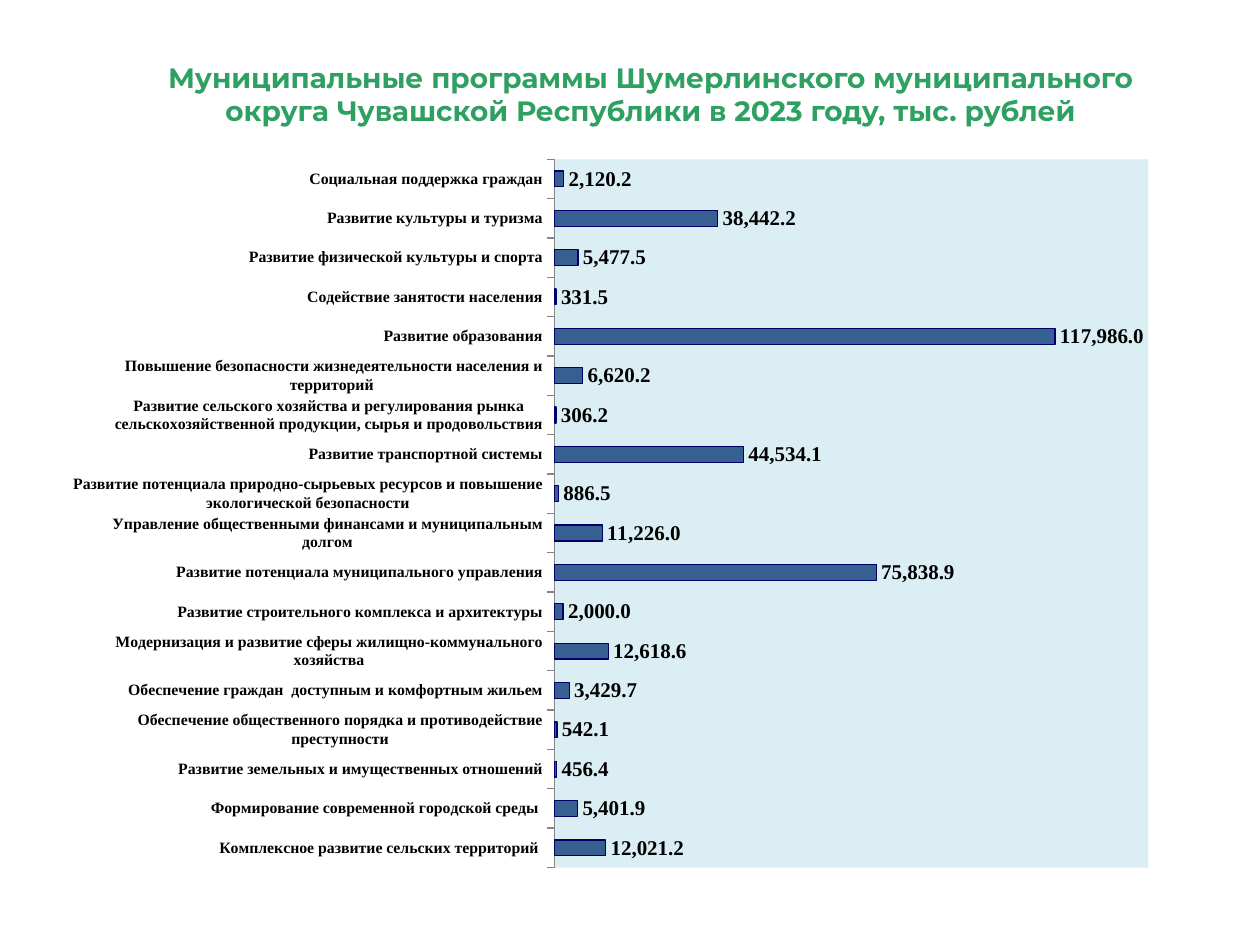
from lxml import etree
from pptx import Presentation
from pptx.chart.data import CategoryChartData
from pptx.dml.color import RGBColor
from pptx.enum.chart import XL_CHART_TYPE, XL_LABEL_POSITION, XL_TICK_LABEL_POSITION, XL_TICK_MARK
from pptx.enum.text import MSO_ANCHOR, PP_ALIGN
from pptx.oxml import parse_xml
from pptx.oxml.ns import nsdecls, qn
from pptx.util import Inches, Pt

TITLE = ("Муниципальные программы Шумерлинского муниципального "
         "округа Чувашской Республики в 2023 году, тыс. рублей")

# Programmes from the bottom bar to the top one, thousand roubles
PROGRAMMES = [
    ("Комплексное развитие сельских территорий ", 12021.2),
    ("Формирование современной городской среды ", 5401.9),
    ("Развитие земельных и имущественных отношений", 456.4),
    ("Обеспечение общественного порядка и противодействие преступности", 542.1),
    ("Обеспечение граждан  доступным и комфортным жильем", 3429.7),
    ("Модернизация и развитие сферы жилищно-коммунального хозяйства", 12618.6),
    ("Развитие строительного комплекса и архитектуры", 2000.0),
    ("Развитие потенциала муниципального управления", 75838.9),
    ("Управление общественными финансами и муниципальным долгом", 11226.0),
    ("Развитие потенциала природно-сырьевых ресурсов и повышение "
     "экологической безопасности", 886.5),
    ("Развитие транспортной системы", 44534.1),
    ("Развитие сельского хозяйства и регулирования рынка "
     "сельскохозяйственной продукции, сырья и продовольствия", 306.2),
    ("Повышение безопасности жизнедеятельности населения и территорий ", 6620.2),
    ("Развитие образования", 117986.0),
    ("Содействие занятости населения", 331.5),
    ("Развитие физической культуры и спорта", 5477.5),
    ("Развитие культуры и туризма", 38442.2),
    ("Социальная поддержка граждан", 2120.2),
]


def color(value):
    return RGBColor.from_string(value)


class Page:
    """Holds the style and the current slide."""

    number_format = "#,##0.0"
    title_font = {"name": "Montserrat", "size": Pt(16), "bold": True}
    chart_font = {"name": "Calibri", "size": Pt(10)}
    axis_font = {"name": "Times New Roman", "size": Pt(9), "bold": True}
    label_font = {"name": "Times New Roman", "size": Pt(12), "bold": True}
    green, black, blue, navy = "2EA061", "000000", "376092", "000066"
    pale, grey = "DBEEF4", "868686"

    def __init__(self, deck):
        self.slide = deck.slides.add_slide(deck.slide_layouts[0])

    def format_font(self, font, values, fill):
        for name, value in values.items():
            setattr(font, name, value)
        font.color.rgb = color(fill)

    def title(self, text, left, top, width, height):
        box = self.slide.shapes.title
        place = {"left": left, "top": top, "width": width, "height": height}
        for name, value in place.items():
            setattr(box, name, Inches(value))
        frame = box.text_frame
        frame.text = text
        frame.word_wrap = True
        frame.vertical_anchor = MSO_ANCHOR.MIDDLE
        para = frame.paragraphs[0]
        para.alignment = PP_ALIGN.CENTER
        para.line_spacing = 1.0
        self.format_font(para.runs[0].font, self.title_font, self.green)

    def bar_chart(self, rows, left, top, width, height):
        data = CategoryChartData(number_format=self.number_format)
        data.categories = [name for name, amount in rows]
        data.add_series("Series 1", [amount for name, amount in rows])
        chart = self.slide.shapes.add_chart(
            XL_CHART_TYPE.BAR_CLUSTERED, Inches(left), Inches(top),
            Inches(width), Inches(height), data).chart
        chart.has_legend = chart.has_title = False
        self.format_font(chart.font, self.chart_font, self.black)
        self.axes(chart)
        self.bars(chart.plots[0])
        return chart

    def axes(self, chart):
        names = chart.category_axis
        names.major_tick_mark = XL_TICK_MARK.OUTSIDE
        names.tick_label_position = XL_TICK_LABEL_POSITION.LOW
        names.format.line.color.rgb = color(self.grey)
        self.format_font(names.tick_labels.font, self.axis_font, self.black)
        amounts = chart.value_axis
        amounts.minimum_scale, amounts.maximum_scale = 0, 140000
        amounts.has_major_gridlines = False
        amounts.visible = False

    def bars(self, plot):
        plot.gap_width = 150
        plot.vary_by_categories = False
        series = plot.series[0]
        series.format.fill.solid()
        series.format.fill.fore_color.rgb = color(self.blue)
        series.format.line.color.rgb = color(self.navy)
        series.format.line.width = Pt(0.75)
        labels = series.data_labels
        values = {"show_value": True, "number_format": self.number_format,
                  "number_format_is_linked": False,
                  "position": XL_LABEL_POSITION.OUTSIDE_END}
        for name, value in values.items():
            setattr(labels, name, value)
        self.format_font(labels.font, self.label_font, self.black)

    def plot_area(self, chart, **place):
        """Fix the inner plot area and give it a background."""
        area = chart.element.find(".//" + qn("c:plotArea"))
        old = area.find(qn("c:layout"))
        if old is not None:
            area.remove(old)
        layout = parse_xml(f"<c:layout {nsdecls('c')}><c:manualLayout/></c:layout>")
        settings = {"layoutTarget": "inner", "xMode": "edge", "yMode": "edge", **place}
        for name, value in settings.items():
            etree.SubElement(layout[0], qn("c:" + name)).set("val", str(value))
        area.insert(0, layout)
        area.append(parse_xml(
            f"<c:spPr {nsdecls('c', 'a')}><a:solidFill>"
            f'<a:srgbClr val="{self.pale}"/></a:solidFill></c:spPr>'))

    def remove_empty(self):
        for box in list(self.slide.placeholders):
            if not box.text_frame.text:
                box.element.getparent().remove(box.element)


def main():
    deck = Presentation()
    deck.slide_width, deck.slide_height = Inches(10), Inches(7.5)
    page = Page(deck)

    # Heading
    page.title(TITLE, 0.99, 0.36, 8.35, 0.77)
    page.remove_empty()

    # Programme amounts
    chart = page.bar_chart(PROGRAMMES, 0.58, 1.02, 8.89, 6.11)
    page.plot_area(chart, x=0.43, y=0.04, w=0.53, h=0.92)

    deck.save("out.pptx")


if __name__ == "__main__":
    main()
